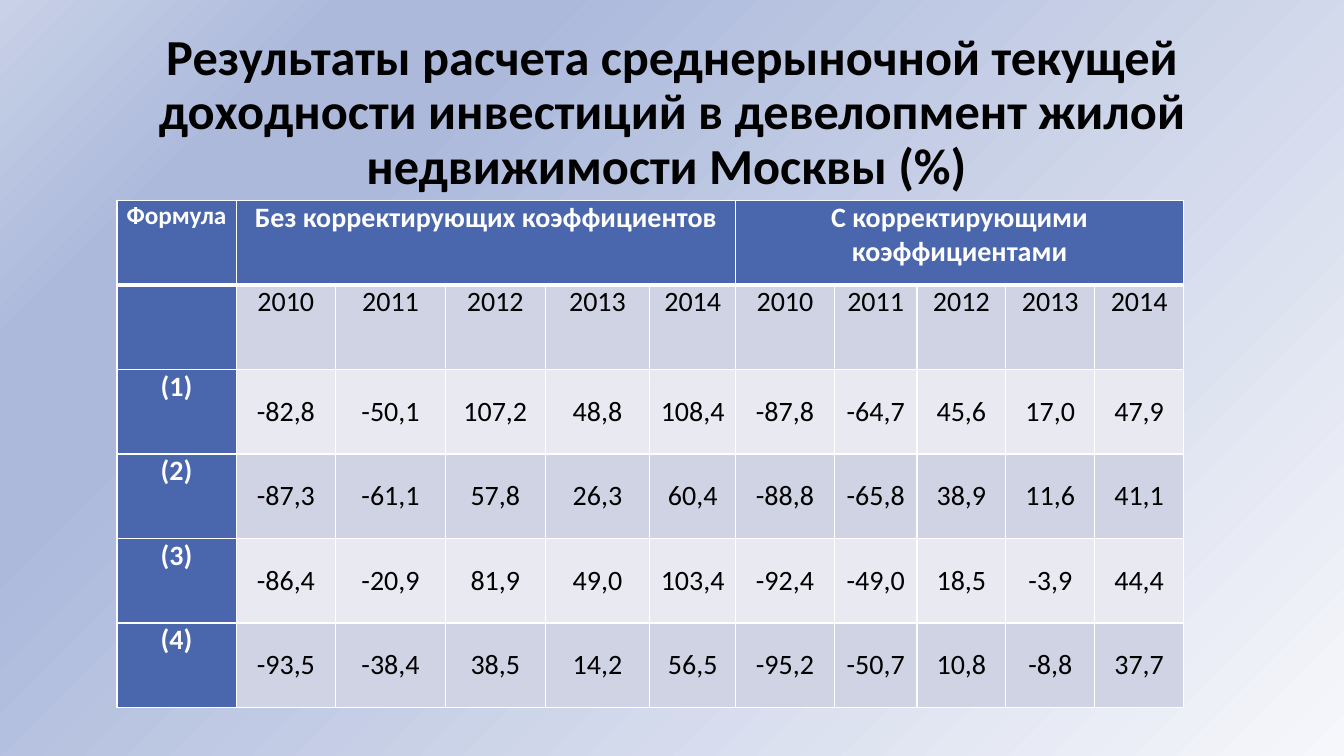
from lxml.etree import SubElement
from pptx import Presentation
from pptx.dml.color import RGBColor
from pptx.enum.text import MSO_ANCHOR as Anchor, PP_ALIGN as Align
from pptx.oxml.ns import qn
from pptx.util import Cm, Pt

FONT = "Calibri"
BLACK, WHITE, BLUE = "000000", "FFFFFF", "4A66AC"
BANDS = ("D0D3E3", "E9EAF1")
BACKGROUND_STOPS = [(0, "C8D1E7"), (17, "ACB9DB"), (26, "ACB9DB"), (100, "F6F7FB")]

TITLE = ("Результаты расчета среднерыночной текущей доходности "
         "инвестиций в девелопмент жилой недвижимости Москвы (%) ")
YEARS = ["2010", "2011", "2012", "2013", "2014"]
GROUPS = ["Без корректирующих коэффициентов", "С корректирующими коэффициентами"]
COLUMN_WIDTHS = [3, 2.51, 2.77, 2.51, 2.64, 2.16, 2.49, 2.08, 2.24, 2.24, 2.24]
ROW_HEIGHT = 2.13
ROWS = [
    ["Формула", GROUPS[0], "", "", "", "", GROUPS[1], "", "", "", ""],
    ["", *YEARS, *YEARS],
    ["(1)", "-82,8", "-50,1", "107,2", "48,8", "108,4",
     "-87,8", "-64,7", "45,6", "17,0", "47,9"],
    ["(2)", "-87,3", "-61,1", "57,8", "26,3", "60,4",
     "-88,8", "-65,8", "38,9", "11,6", "41,1"],
    ["(3)", "-86,4", "-20,9", "81,9", "49,0", "103,4",
     "-92,4", "-49,0", "18,5", "-3,9", "44,4"],
    ["(4)", "-93,5", "-38,4", "38,5", "14,2", "56,5",
     "-95,2", "-50,7", "10,8", "-8,8", "37,7"],
]


def rgb(value):
    return RGBColor.from_string(value)


def set_background(slide, stops):
    """Fill the slide diagonally, from its top left to its bottom right corner."""
    fill = slide.background.fill
    fill.gradient()
    fill.gradient_angle = 315
    stop_list = slide.element.find(".//" + qn("a:gsLst"))
    stop_list.clear()
    for percent, color in stops:
        stop = SubElement(stop_list, qn("a:gs"), pos=str(percent * 1000))
        SubElement(stop, qn("a:srgbClr"), val=color)


def write(frame, text, size, color, bold):
    para = frame.paragraphs[0]
    para.text = text
    para.alignment = Align.CENTER
    font = para.font
    font.name, font.size, font.bold = FONT, Pt(size), bold
    font.color.rgb = rgb(color)
    return para


def add_title(slide, text):
    box = slide.shapes.add_textbox(Cm(2.34), Cm(1.02), Cm(29.21), Cm(3.68))
    frame = box.text_frame
    frame.word_wrap = True
    frame.vertical_anchor = Anchor.MIDDLE
    write(frame, text, 36, BLACK, True).line_spacing = 0.9


def set_borders(cell, top, bottom):
    """Draw white borders; top and bottom are widths in points."""
    properties = cell._tc.get_or_add_tcPr()
    for side, width in (("L", 1), ("R", 1), ("T", top), ("B", bottom)):
        line = SubElement(properties, qn("a:ln" + side), w=str(Pt(width)))
        fill = SubElement(line, qn("a:solidFill"))
        SubElement(fill, qn("a:srgbClr"), val=WHITE)


def format_cell(cell, text, row, column):
    heading = row == 0 or column == 0
    set_borders(cell, top=3 if row == 1 else 1, bottom=3 if row == 0 else 1)
    cell.fill.solid()
    cell.fill.fore_color.rgb = rgb(BLUE if heading else BANDS[(row - 1) % 2])
    cell.margin_left = cell.margin_right = Cm(0.18)
    cell.margin_top = cell.margin_bottom = 0
    if row > 1 and column > 0:
        cell.vertical_anchor = Anchor.MIDDLE
    if text:
        size = 18 if row == column == 0 else 20
        write(cell.text_frame, text, size, WHITE if heading else BLACK, heading)


def add_returns_table(slide):
    table = slide.shapes.add_table(
        len(ROWS), len(COLUMN_WIDTHS), Cm(2.95), Cm(5.05),
        Cm(sum(COLUMN_WIDTHS)), Cm(ROW_HEIGHT * len(ROWS))).table
    for column, width in zip(table.columns, COLUMN_WIDTHS):
        column.width = Cm(width)
    for table_row in table.rows:
        table_row.height = Cm(ROW_HEIGHT)
    for row, texts in enumerate(ROWS):
        for column, text in enumerate(texts):
            format_cell(table.cell(row, column), text, row, column)
    for group in range(len(GROUPS)):
        first = 1 + group * len(YEARS)
        table.cell(0, first).merge(table.cell(0, first + len(YEARS) - 1))


def main():
    deck = Presentation()
    deck.slide_width, deck.slide_height = Cm(33.87), Cm(19.05)
    slide = deck.slides.add_slide(deck.slide_layouts[6])
    set_background(slide, BACKGROUND_STOPS)
    add_title(slide, TITLE)
    add_returns_table(slide)
    deck.save("out.pptx")


if __name__ == "__main__":
    main()
